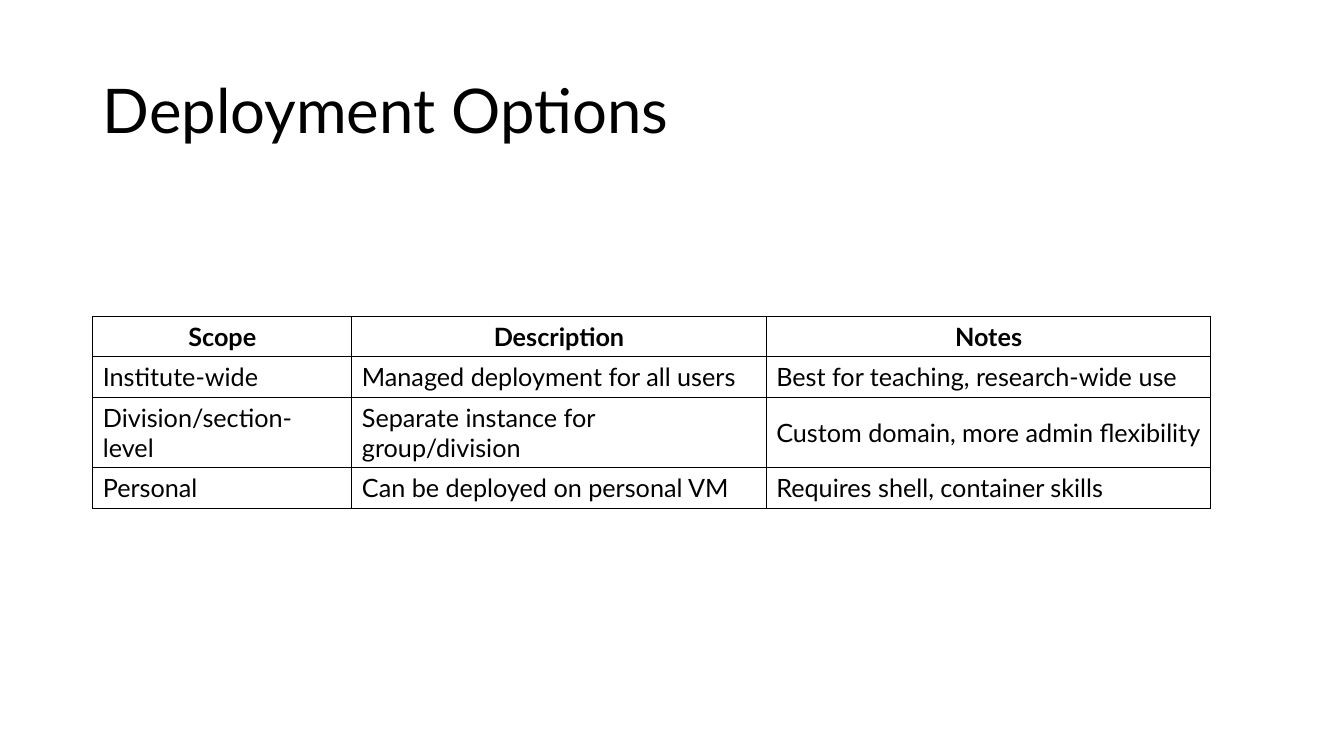
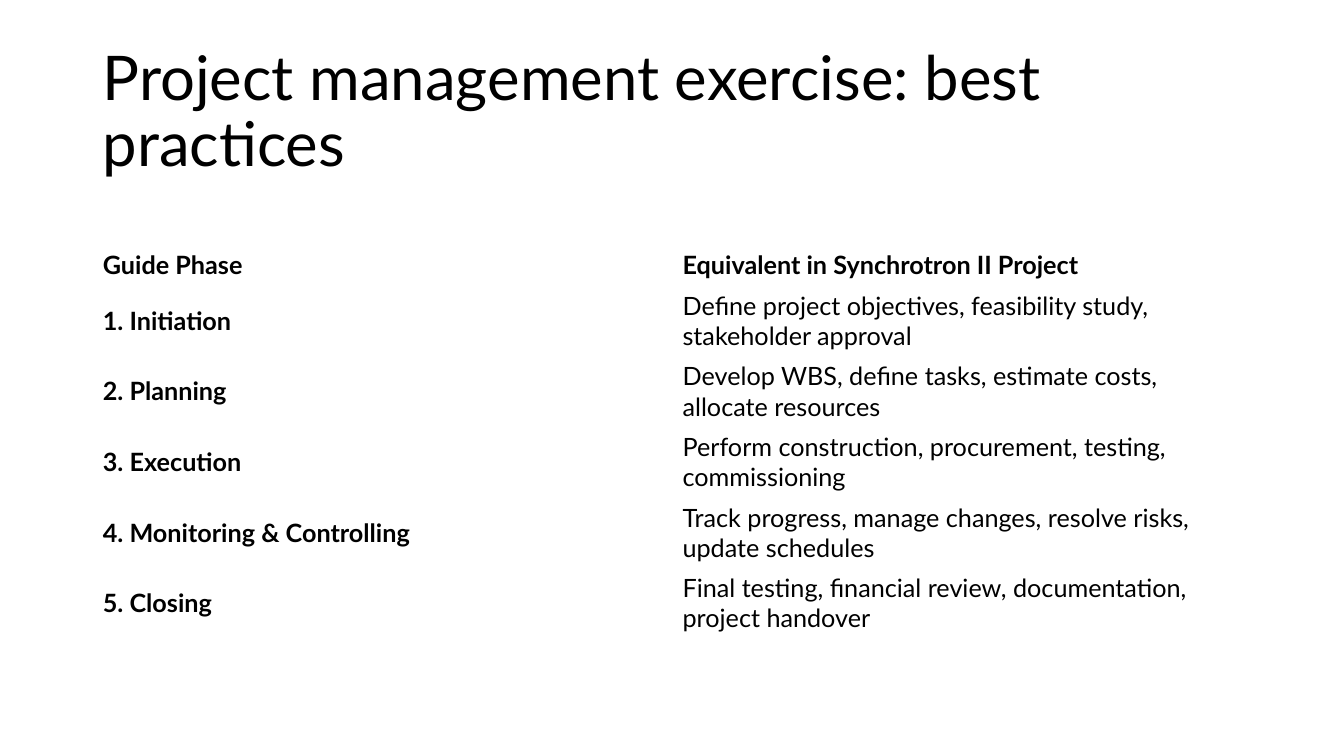
"""Build two slides, each with a title and a table."""
from lxml import etree
from pptx import Presentation
from pptx.dml.color import RGBColor
from pptx.enum.text import MSO_ANCHOR, PP_ALIGN
from pptx.oxml.ns import qn
from pptx.util import Inches, Pt

MIDDLE = MSO_ANCHOR.MIDDLE
LEFT, CENTER = PP_ALIGN.LEFT, PP_ALIGN.CENTER
FONT = "Lato"
INK = "000000"
MARGIN = 0.92
TITLE_SIZE, TABLE_SIZE = 44, 18
LINE_HEIGHTS = {1: 0.4, 2: 0.7}


def add_text(paragraph, text, size, bold=False):
    run = paragraph.add_run()
    run.text = text
    run.font.name = FONT
    run.font.size = Pt(size)
    run.font.bold = bold
    run.font.color.rgb = RGBColor.from_string(INK)


def add_borders(cell):
    properties = cell._tc.get_or_add_tcPr()
    for side in ("a:lnL", "a:lnR", "a:lnT", "a:lnB"):
        border = etree.SubElement(properties, qn(side), w=str(Pt(1)))
        fill = etree.SubElement(border, qn("a:solidFill"))
        etree.SubElement(fill, qn("a:srgbClr"), val=INK)


pages = [
    {
        "title": "Deployment Options",
        "top": 3.14,
        "columns": [2.57, 4.11, 4.41],
        "row_lines": [1, 1, 2, 1],
        "header_align": CENTER,
        "bordered": True,
        "bold_first_column": False,
        "rows": [
            ("Scope", "Description", "Notes"),
            ("Institute-wide", "Managed deployment for all users",
             "Best for teaching, research-wide use"),
            ("Division/section-level", "Separate instance for group/division",
             "Custom domain, more admin flexibility"),
            ("Personal", "Can be deployed on personal VM",
             "Requires shell, container skills"),
        ],
    },
    {
        "title": "Project management exercise: best practices",
        "top": 2.43,
        "columns": [5.75, 5.75],
        "row_lines": [1, 2, 2, 2, 2, 2],
        "header_align": LEFT,
        "bordered": False,
        "bold_first_column": True,
        "rows": [
            ("Guide Phase", "Equivalent in Synchrotron II Project"),
            ("1. Initiation",
             "Define project objectives, feasibility study, stakeholder approval"),
            ("2. Planning",
             "Develop WBS, define tasks, estimate costs, allocate resources"),
            ("3. Execution",
             "Perform construction, procurement, testing, commissioning"),
            ("4. Monitoring & Controlling",
             "Track progress, manage changes, resolve risks, update schedules"),
            ("5. Closing",
             "Final testing, financial review, documentation, project handover"),
        ],
    },
]

deck = Presentation()
deck.slide_width, deck.slide_height = Inches(13.33), Inches(7.5)

for page in pages:
    slide = deck.slides.add_slide(deck.slide_layouts[6])

    title = slide.shapes.add_textbox(
        Inches(MARGIN), Inches(0.4), Inches(11.5), Inches(1.45)).text_frame
    title.word_wrap = True
    title.vertical_anchor = MIDDLE
    title.paragraphs[0].line_spacing = 0.9
    add_text(title.paragraphs[0], page["title"], TITLE_SIZE)

    rows, columns = page["rows"], page["columns"]
    heights = [LINE_HEIGHTS[lines] for lines in page["row_lines"]]
    table = slide.shapes.add_table(
        len(rows), len(columns), Inches(MARGIN), Inches(page["top"]),
        Inches(sum(columns)), Inches(sum(heights))).table
    table.horz_banding = False
    for column, width in zip(table.columns, columns):
        column.width = Inches(width)

    for r, (texts, height) in enumerate(zip(rows, heights)):
        table.rows[r].height = Inches(height)
        for c, text in enumerate(texts):
            cell = table.cell(r, c)
            cell.vertical_anchor = MIDDLE
            if page["bordered"]:
                add_borders(cell)
            cell.fill.background()
            paragraph = cell.text_frame.paragraphs[0]
            paragraph.alignment = page["header_align"] if r == 0 else LEFT
            bold = r == 0 or (c == 0 and page["bold_first_column"])
            add_text(paragraph, text, TABLE_SIZE, bold)

deck.save("out.pptx")
